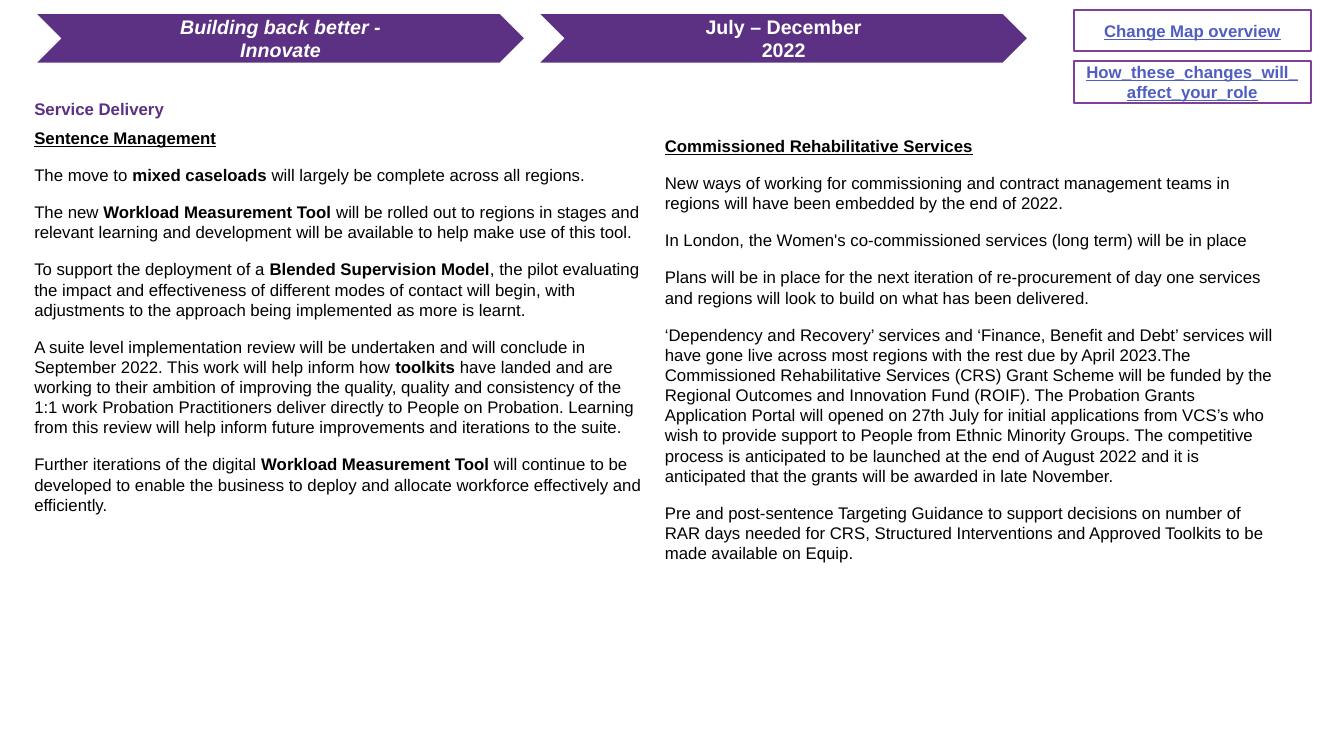
import pptx
import pptx.util
import pptx.dml.color
import pptx.enum.shapes
import pptx.enum.text
import pptx.oxml

Pt = pptx.util.Pt
SHAPES = pptx.enum.shapes.MSO_SHAPE
ALIGN = pptx.enum.text.PP_ALIGN
ANCHOR = pptx.enum.text.MSO_ANCHOR

COLOURS = {"purple": "5C3183", "border": "7F4098", "link": "505DC1",
           "white": "FFFFFF", "black": "000000"}
WIDTH, HEIGHT = pptx.util.Inches(13.33), pptx.util.Inches(7.5)

BANNERS = [(["Building back better -", "Innovate"], True),
           (["July – December", "2022"], False)]
LINKS = ["Change Map overview", "How_these_changes_will_affect_your_role"]

# Double asterisks enclose bold words.
SENTENCE_MANAGEMENT = [
    "The move to **mixed caseloads** will largely be complete across all regions.",
    "The new **Workload Measurement Tool** will be rolled out to regions in stages and relevant "
    "learning and development will be available to help make use of this tool.",
    "To support the deployment of a **Blended Supervision Model**, the pilot evaluating the impact "
    "and effectiveness of different modes of contact will begin, with adjustments to the approach "
    "being implemented as more is learnt.",
    "A suite level implementation review will be undertaken and will conclude in September 2022. "
    "This work will help inform how **toolkits** have landed and are working to their ambition of "
    "improving the quality, quality and consistency of the 1:1 work Probation Practitioners deliver "
    "directly to People on Probation. Learning from this review will help inform future "
    "improvements and iterations to the suite.",
    "Further iterations of the digital **Workload Measurement Tool** will continue to be developed "
    "to enable the business to deploy and allocate workforce effectively and efficiently.",
]
REHABILITATIVE_SERVICES = [
    "New ways of working for commissioning and contract management teams in regions will have been "
    "embedded by the end of 2022.",
    "In London, the Women's co-commissioned services (long term) will be in place",
    "Plans will be in place for the next iteration of re-procurement of day one services and "
    "regions will look to build on what has been delivered.",
    "‘Dependency and Recovery’ services and ‘Finance, Benefit and Debt’ services will have gone "
    "live across most regions with the rest due by April 2023.The Commissioned Rehabilitative "
    "Services (CRS) Grant Scheme will be funded by the Regional Outcomes and Innovation Fund "
    "(ROIF). The Probation Grants Application Portal will opened on 27th July for initial "
    "applications from VCS’s who wish to provide support to People from Ethnic Minority Groups. "
    "The competitive process is anticipated to be launched at the end of August 2022 and it is "
    "anticipated that the grants will be awarded in late November.",
    "Pre and post-sentence Targeting Guidance to support decisions on number of RAR days needed "
    "for CRS, Structured Interventions and Approved Toolkits to be made available on Equip.",
]


def colour(name):
    return pptx.dml.color.RGBColor.from_string(COLOURS[name])


def area(left, top, width, height):
    """Turn percentages of the slide into lengths."""
    return [int(share * side / 100) for share, side in
            zip((left, top, width, height), (WIDTH, HEIGHT, WIDTH, HEIGHT))]


def style(para, size, tint, bold=False, italic=False, underline=False, align=ALIGN.LEFT):
    para.alignment = align
    font = para.font
    font.name, font.size = "Arial", Pt(size)
    font.bold, font.italic, font.underline = bold, italic, underline
    font.color.rgb = colour(tint)


def place(holder, box):
    holder.left, holder.top, holder.width, holder.height = area(*box)
    frame = holder.text_frame
    frame.word_wrap = True
    frame.auto_size = pptx.enum.text.MSO_AUTO_SIZE.NONE
    frame.vertical_anchor = ANCHOR.TOP
    return frame


def label_shape(page, kind, box, lines):
    shape = page.shapes.add_shape(kind, *area(*box))
    shape.shadow.inherit = False
    frame = shape.text_frame
    frame.word_wrap = True
    frame.vertical_anchor = ANCHOR.MIDDLE
    frame.text = "\n".join(lines)
    return shape


def add_banners(page, left, top, width, height, pitch):
    for index, (lines, italic) in enumerate(BANNERS):
        banner = label_shape(page, SHAPES.CHEVRON,
                             (left + index * pitch, top, width, height), lines)
        banner.fill.solid()
        banner.fill.fore_color.rgb = colour("purple")
        banner.line.fill.background()
        for para in banner.text_frame.paragraphs:
            style(para, 14, "white", bold=True, italic=italic, align=ALIGN.CENTER)


def add_links(page, left, top, width, height, pitch):
    for index, words in enumerate(LINKS):
        button = label_shape(page, SHAPES.RECTANGLE,
                             (left, top + index * pitch, width, height), [words])
        button.fill.background()
        button.line.color.rgb = colour("border")
        button.line.width = Pt(1.5)
        style(button.text_frame.paragraphs[0], 12, "link", bold=True, underline=True,
              align=ALIGN.CENTER)


def fill_column(holder, box, heading, paragraphs):
    frame = place(holder, box)
    for index, words in enumerate([heading] + paragraphs):
        para = frame.paragraphs[0] if index == 0 else frame.add_paragraph()
        properties = para._p.get_or_add_pPr()
        properties.set("marL", "0")
        properties.set("indent", "0")
        properties.append(pptx.oxml.parse_xml(
            '<a:buNone xmlns:a="http://schemas.openxmlformats.org/drawingml/2006/main"/>'))
        para.space_before = Pt(6 if index else 0)
        para.space_after = Pt(6)
        style(para, 12, "black", bold=index == 0, underline=index == 0)
        for position, part in enumerate(words.split("**")):
            span = para.add_run()
            span.text = part
            if position % 2:
                span.font.bold = True


def build_service_delivery(deck):
    page = deck.slides.add_slide(deck.slide_layouts.get_by_name("Two Content"))
    title, left_body, right_body = list(page.placeholders)[:3]
    margin, column = 1.8, 46.92
    frame = place(title, (margin, 12.4, column, 3.9))
    frame.text = "Service Delivery"
    style(frame.paragraphs[0], 12, "purple", bold=True)
    fill_column(left_body, (margin, 16.27, column, 60),
                "Sentence Management", SENTENCE_MANAGEMENT)
    fill_column(right_body, (margin + column, 17.33, column, 60),
                "Commissioned Rehabilitative Services", REHABILITATIVE_SERVICES)
    add_banners(page, 2.78, 1.87, 36.2, 6.4, pitch=37.43)
    add_links(page, 79.9, 1.33, 17.63, 5.47, pitch=6.8)


def main():
    deck = pptx.Presentation()
    deck.slide_width, deck.slide_height = WIDTH, HEIGHT
    build_service_delivery(deck)
    deck.save("out.pptx")


if __name__ == "__main__":
    main()
